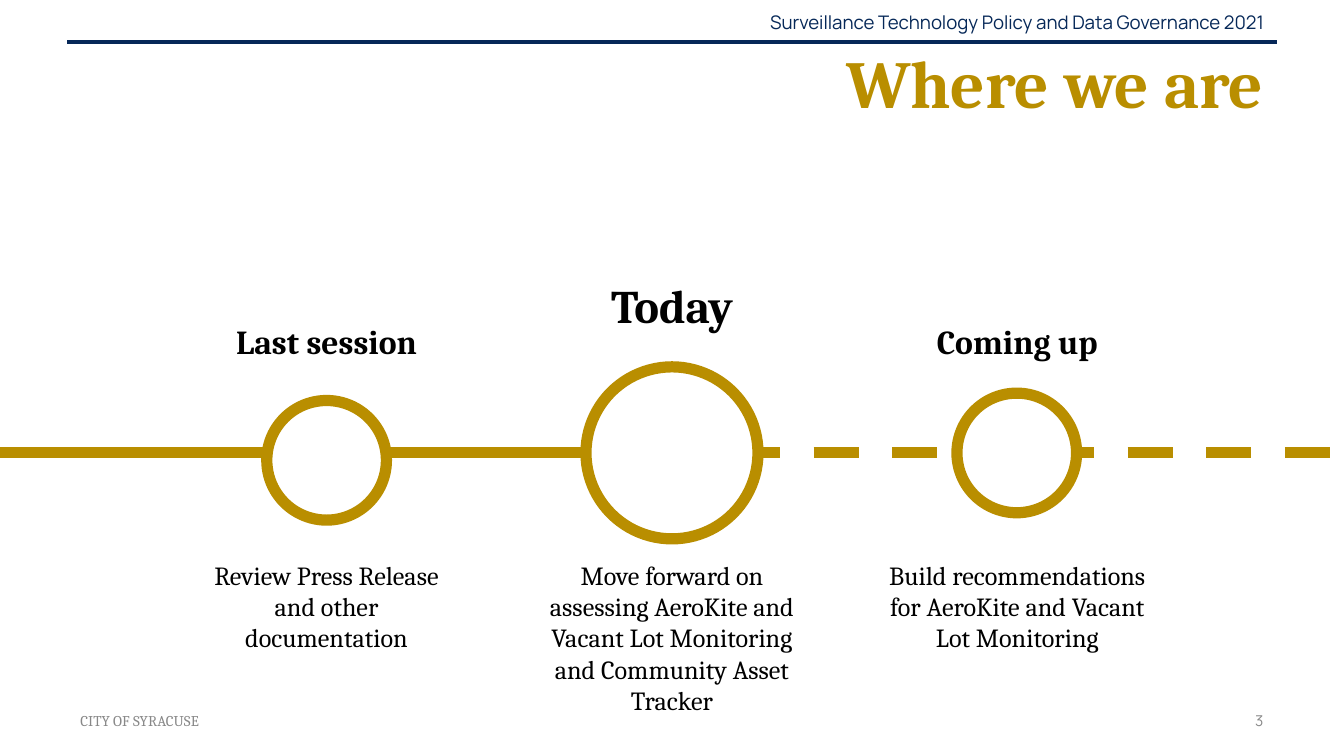
import pptx
import pptx.util
import pptx.dml.color
import pptx.enum.dml
import pptx.enum.shapes
import pptx.enum.text
import pptx.oxml

PX = 4572
GOLD, NAVY, GREY, BLACK, WHITE = "B98E00", "062858", "888888", "000000", "FFFFFF"
ALIGN = pptx.enum.text.PP_ALIGN
ANCHOR = pptx.enum.text.MSO_ANCHOR
FIT = pptx.enum.text.MSO_AUTO_SIZE


def color(code):
    return pptx.dml.color.RGBColor.from_string(code)


def write(box, text, size, font, tint, align, pad=10, bold=False, anchor=ANCHOR.MIDDLE):
    frame = box.text_frame
    frame.text = text
    frame.word_wrap = True
    frame.auto_size = FIT.NONE
    frame.vertical_anchor = anchor
    frame.margin_left = frame.margin_right = 20 * PX
    frame.margin_top = frame.margin_bottom = pad * PX
    for para in frame.paragraphs:
        para.alignment = align
        for run in para.runs:
            run.font.size = pptx.util.Pt(size)
            run.font.name = font
            run.font.bold = bold
            run.font.color.rgb = color(tint)


deck = pptx.Presentation()
deck.slide_width, deck.slide_height = 2000 * PX, 1125 * PX
slide = deck.slides.add_slide(deck.slide_layouts[5])
shapes = slide.shapes

title = shapes.title
title.left, title.top, title.width, title.height = [n * PX for n in (1000, 58, 900, 128)]
write(title, "Where we are", 36, "Cambria", GOLD, ALIGN.RIGHT, bold=True)

labels = [
    (1042, 3, 858, "Surveillance Technology Policy and Data Governance 2021", 10, "Manrope", NAVY, ALIGN.RIGHT),
    (1434, 1043, 466, "3", 8, "Manrope", GREY, ALIGN.RIGHT),
    (100, 1043, 466, "CITY OF SYRACUSE", 8, "Cambria", GREY, ALIGN.LEFT),
]
for left, top, width, text, size, font, tint, align in labels:
    box = shapes.add_textbox(left * PX, top * PX, width * PX, 60 * PX)
    write(box, text, size, font, tint, align)

lines = [
    (100, 1900, 62, NAVY, 2.25, False),
    (-2, 872, 674, GOLD, 6, False),
    (1094, 2004, 674, GOLD, 6, True),
]
for start, end, y, tint, weight, dashed in lines:
    line = shapes.add_connector(pptx.enum.shapes.MSO_CONNECTOR.STRAIGHT, start * PX, y * PX, end * PX, y * PX)
    line.line.color.rgb = color(tint)
    line.line.width = pptx.util.Pt(weight)
    if dashed:
        line.line.dash_style = pptx.enum.dml.MSO_LINE.DASH
    line._element.spPr.append(pptx.oxml.parse_xml(
        '<a:effectLst xmlns:a="http://schemas.openxmlformats.org/drawingml/2006/main"/>'))

steps = [
    (274, "Last session", 18, 458, 100, (397, 596, 178), 134,
     "Review Press Release and other documentation"),
    (788, "Today", 25, 392, 124, (872, 546, 256), 276,
     "Move forward on assessing AeroKite and Vacant Lot Monitoring\nand Community Asset Tracker"),
    (1302, "Coming up", 18, 458, 100, (1424, 585, 178), 182,
     "Build recommendations for AeroKite and Vacant Lot Monitoring"),
]
for left, head, size, top, height, ring, depth, body in steps:
    x, y, side = [n * PX for n in ring]
    dot = shapes.add_shape(pptx.enum.shapes.MSO_SHAPE.OVAL, x, y, side, side)
    dot.shadow.inherit = False
    dot.fill.solid()
    dot.fill.fore_color.rgb = color(WHITE)
    dot.line.color.rgb = color(GOLD)
    dot.line.width = pptx.util.Pt(6)
    box = shapes.add_textbox(left * PX, top * PX, 424 * PX, height * PX)
    write(box, head, size, "Cambria", BLACK, ALIGN.CENTER, 20, True, ANCHOR.TOP)
    box = shapes.add_textbox(left * PX, 812 * PX, 424 * PX, depth * PX)
    write(box, body, 14, "Cambria", BLACK, ALIGN.CENTER, 20, False, ANCHOR.TOP)

deck.save("out.pptx")
